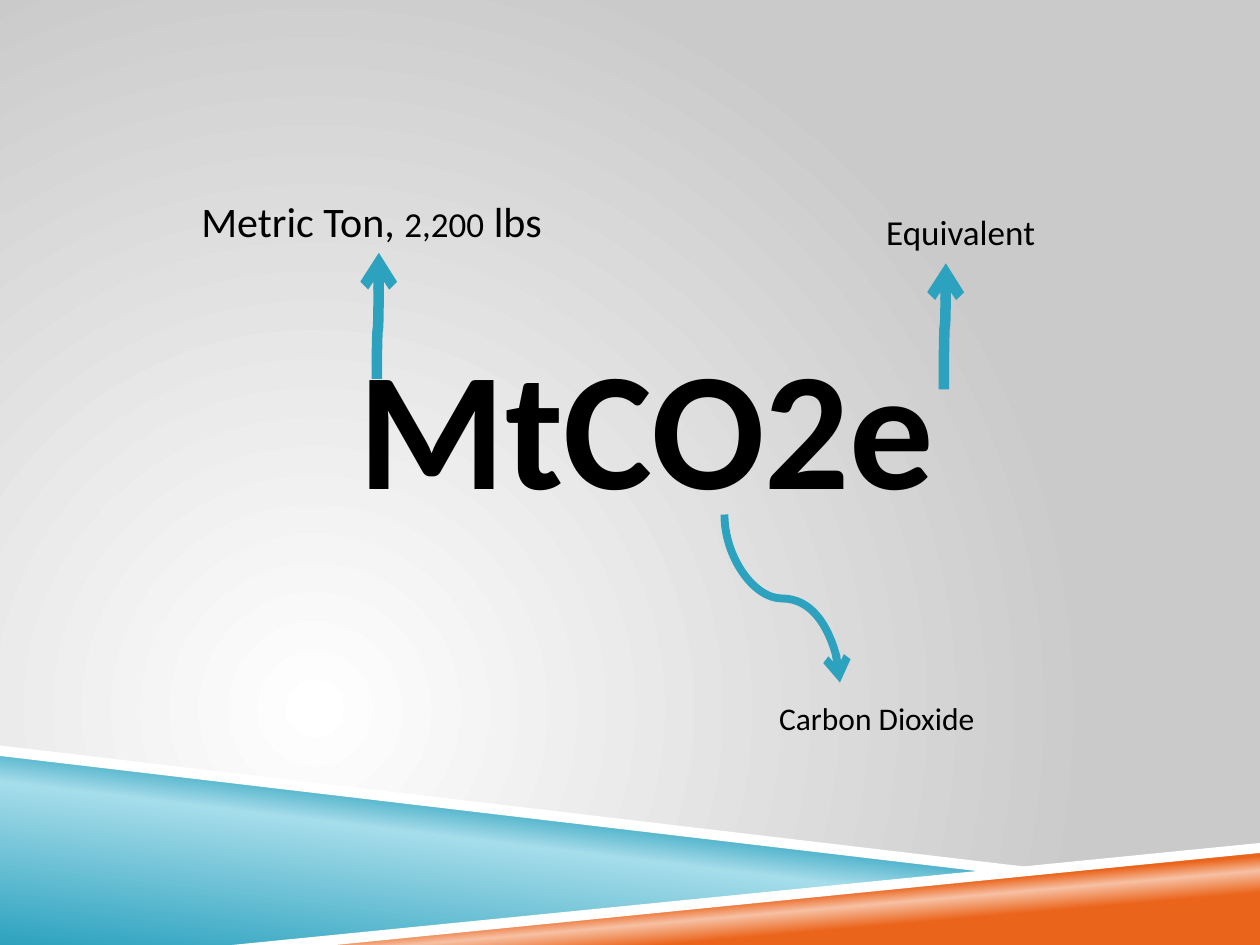
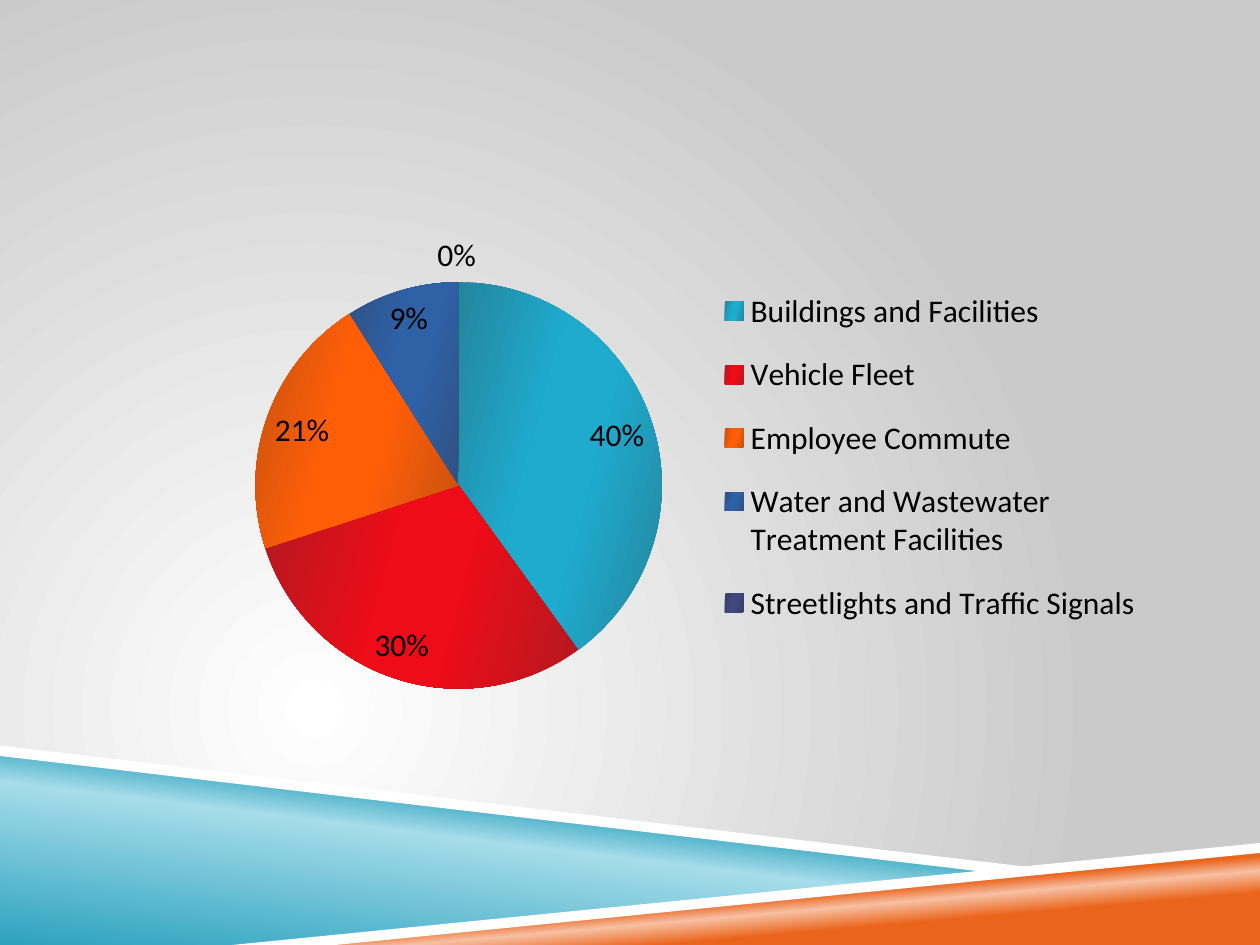
from dataclasses import dataclass

from lxml.etree import SubElement
from pptx import Presentation
from pptx.chart.data import CategoryChartData
from pptx.dml.color import RGBColor
from pptx.enum.chart import XL_CHART_TYPE as ChartType
from pptx.enum.chart import XL_LABEL_POSITION as LabelPosition
from pptx.enum.chart import XL_LEGEND_POSITION as LegendPosition
from pptx.enum.shapes import MSO_CONNECTOR as Connector
from pptx.enum.text import MSO_AUTO_SIZE as AutoSize
from pptx.enum.text import PP_ALIGN as Align
from pptx.oxml.ns import qn
from pptx.util import Pt


@dataclass(frozen=True)
class Theme:
    font: str = "Calibri"
    ink: str = "000000"
    white: str = "FFFFFF"
    grey: str = "CACACA"
    teal: str = "2DA2BF"
    pale_teal: str = "A6DDEA"
    red: str = "DA1F28"
    orange: str = "EB641B"
    pale_orange: str = "F7C1A4"
    blue: str = "39639D"
    purple: str = "474B78"
    formula_size: int = 96
    large: int = 24
    medium: int = 20
    small: int = 18


THEME = Theme()
WIDTH, HEIGHT = 720, 540

# Outline, then either one colour or gradient stops with their angle
BANDS = [
    ([(0, 430), (570, 498.4), (144, 540), (0, 540)],
     [(0, THEME.teal), (52, THEME.pale_teal), (66, THEME.teal)], 277),
    ([(142.5, 540), (720, 484), (720, 540)],
     [(28, THEME.orange), (40, THEME.pale_orange), (48, THEME.orange)], 265),
    ([(0, 426), (0, 432), (569, 499), (599, 496.8)], THEME.white, None),
    ([(720, 481.7), (132.5, 540), (191.5, 540), (720, 487.4)], THEME.white, None),
]

EMISSIONS = [
    ("Buildings and Facilities", 40, THEME.teal),
    ("Vehicle Fleet", 30, THEME.red),
    ("Employee Commute", 21, THEME.orange),
    ("Water and Wastewater Treatment Facilities", 9, THEME.blue),
    ("Streetlights and Traffic Signals", 0, THEME.purple),
]


def rgb(colour):
    return RGBColor.from_string(colour)


def set_gradient(gradient, stops, angle=None, centre=None):
    """Fill a gradFill element; a stop is (percent, colour, optional modifiers)."""
    for child in list(gradient):
        gradient.remove(child)
    stop_list = SubElement(gradient, qn("a:gsLst"))
    for percent, colour, *modifiers in stops:
        stop = SubElement(stop_list, qn("a:gs"), pos=str(percent * 1000))
        tone = SubElement(stop, qn("a:srgbClr"), val=colour)
        for name, amount in modifiers:
            SubElement(tone, qn(f"a:{name}"), val=str(amount * 1000))
    if centre:
        path = SubElement(gradient, qn("a:path"), path="circle")
        sides = {side: str(value * 1000) for side, value in zip("ltrb", centre)}
        SubElement(path, qn("a:fillToRect"), **sides)
    else:
        SubElement(gradient, qn("a:lin"), ang=str(angle * 60000), scaled="0")


def add_band(slide, outline, paint, angle):
    points = [(Pt(x), Pt(y)) for x, y in outline]
    builder = slide.shapes.build_freeform(*points[0], scale=1.0)
    builder.add_line_segments(points[1:], close=True)
    band = builder.convert_to_shape()
    band.shadow.inherit = False
    band.line.fill.background()
    if angle is None:
        band.fill.solid()
        band.fill.fore_color.rgb = rgb(paint)
    else:
        band.fill.gradient()
        set_gradient(band.element.find(".//" + qn("a:gradFill")), paint, angle)


def add_page(deck):
    """Blank slide with the shared background and bottom bands."""
    page = deck.slides.add_slide(deck.slide_layouts[6])
    page.background.fill.gradient()
    set_gradient(page.element.find(".//" + qn("a:gradFill")),
                 [(0, THEME.white), (100, THEME.grey)], centre=(50, 100, 100, 50))
    for outline, paint, angle in BANDS:
        add_band(page, outline, paint, angle)
    return page


def add_label(page, left, top, width, height, spans, align=Align.CENTER, bold=False):
    box = page.shapes.add_textbox(Pt(left), Pt(top), Pt(width), Pt(height))
    frame = box.text_frame
    frame.word_wrap = True
    frame.auto_size = AutoSize.SHAPE_TO_FIT_TEXT
    para = frame.paragraphs[0]
    para.alignment = align
    for text, size in spans:
        span = para.add_run()
        span.text = text
        span.font.name = THEME.font
        span.font.size = Pt(size)
        span.font.bold = bold
        span.font.color.rgb = rgb(THEME.ink)


def add_curved_arrow(page, start, end, weight, bend=50):
    """Curve that leaves and arrives vertically: a sideways curve turned upright."""
    (x1, y1), (x2, y2) = start, end
    middle_x, middle_y = (x1 + x2) / 2, (y1 + y2) / 2
    turn, sign = (90, 1) if y2 < y1 else (270, -1)
    reach_x, reach_y = sign * (y1 - y2) / 2, sign * (x2 - x1) / 2
    arrow = page.shapes.add_connector(
        Connector.CURVE,
        Pt(middle_x + reach_x), Pt(middle_y + reach_y),
        Pt(middle_x - reach_x), Pt(middle_y - reach_y))
    arrow.line.color.rgb = rgb(THEME.teal)
    arrow.line.width = Pt(weight)
    properties = arrow.element.spPr
    properties.find(qn("a:xfrm")).set("rot", str(turn * 60000))
    guides = properties.find(qn("a:prstGeom")).find(qn("a:avLst"))
    SubElement(guides, qn("a:gd"), name="adj1", fmla=f"val {round(bend * 1000)}")
    SubElement(properties.find(qn("a:ln")), qn("a:tailEnd"), type="arrow")
    SubElement(properties, qn("a:effectLst"))


def place_part(part, position, **settings):
    """Fix a chart part's place, given as fractions of the chart."""
    layout = part.find(qn("c:layout"))
    if layout is None:
        layout = part.makeelement(qn("c:layout"))
        part.insert(1 if part.tag == qn("c:legend") else 0, layout)
    manual = SubElement(layout, qn("c:manualLayout"))
    settings.update(xMode="edge", yMode="edge", **dict(zip("xywh", position)))
    for name, value in settings.items():
        SubElement(manual, qn(f"c:{name}"), val=str(value))


def hide_label(labels, index):
    label = labels.makeelement(qn("c:dLbl"))
    SubElement(label, qn("c:idx"), val=str(index))
    SubElement(label, qn("c:delete"), val="1")
    labels.insert(0, label)


def add_pie(page, left, top, width, height, slices):
    names, values, colours = zip(*slices)
    data = CategoryChartData()
    data.categories = names
    data.add_series("Series 1", values)
    chart = page.shapes.add_chart(
        ChartType.PIE, Pt(left), Pt(top), Pt(width), Pt(height), data).chart
    chart.has_title = False
    chart.font.name = THEME.font
    chart.font.size = Pt(THEME.small)
    chart.font.color.rgb = rgb(THEME.ink)
    chart.has_legend = True
    chart.legend.position = LegendPosition.RIGHT
    chart.legend.include_in_layout = False
    root = chart.element
    place_part(root.find(".//" + qn("c:plotArea")), (0.11, 0.12, 0.46, 0.79),
               layoutTarget="inner")
    place_part(root.find(".//" + qn("c:legend")), (0.57, 0.09, 0.42, 0.74))

    # Slices, vivid in the middle and darker at the edges
    plot = chart.plots[0]
    plot.vary_by_categories = True
    series = plot.series[0]
    for index in range(len(slices)):
        look = series.points[index].format
        look.fill.gradient()
        look.line.fill.background()
    for gradient, colour in zip(root.findall(".//" + qn("a:gradFill")), colours):
        edge, vivid = (colour, ("lumMod", 82)), (colour, ("satMod", 120))
        set_gradient(gradient, [(0, *edge), (40, *vivid), (60, *vivid), (100, *edge)],
                     angle=15)

    # Percentages; an empty slice has no label of its own
    labels = series.data_labels
    labels.show_percentage = True
    labels.show_value = False
    labels.number_format = "0%"
    labels.number_format_is_linked = False
    labels.position = LabelPosition.BEST_FIT
    hide_label(root.find(".//" + qn("c:dLbls")), values.index(0))


def build_unit_page(deck):
    page = add_page(deck)
    add_label(page, 147.5, 180, 444, 124, [("MtCO2e", THEME.formula_size)], bold=True)
    # Arrows from the parts of the unit to their meanings
    add_curved_arrow(page, (539.3, 222.5), (540.5, 150.5), 6)
    add_curved_arrow(page, (414, 294), (480, 390), 4.5)
    add_curved_arrow(page, (215.3, 216.5), (216.5, 144.5), 6, bend=39.7)
    # Meanings
    add_label(page, 108, 108, 246, 36,
              [("Metric Ton, ", THEME.large), ("2,200", THEME.medium),
               (" lbs", THEME.large)], align=Align.LEFT)
    add_label(page, 402, 396, 198, 29, [("Carbon Dioxide", THEME.small)])
    add_label(page, 444, 117, 210, 32, [("Equivalent", THEME.medium)])


def build_emissions_page(deck):
    page = add_page(deck)
    add_pie(page, 54, 126, 612, 294, EMISSIONS)
    # Label of the empty slice, above the top of the pie
    add_label(page, 236, 131, 50, 29, [("0%", THEME.small)])


def main():
    deck = Presentation()
    deck.slide_width, deck.slide_height = Pt(WIDTH), Pt(HEIGHT)
    build_unit_page(deck)
    build_emissions_page(deck)
    deck.save("out.pptx")


if __name__ == "__main__":
    main()
